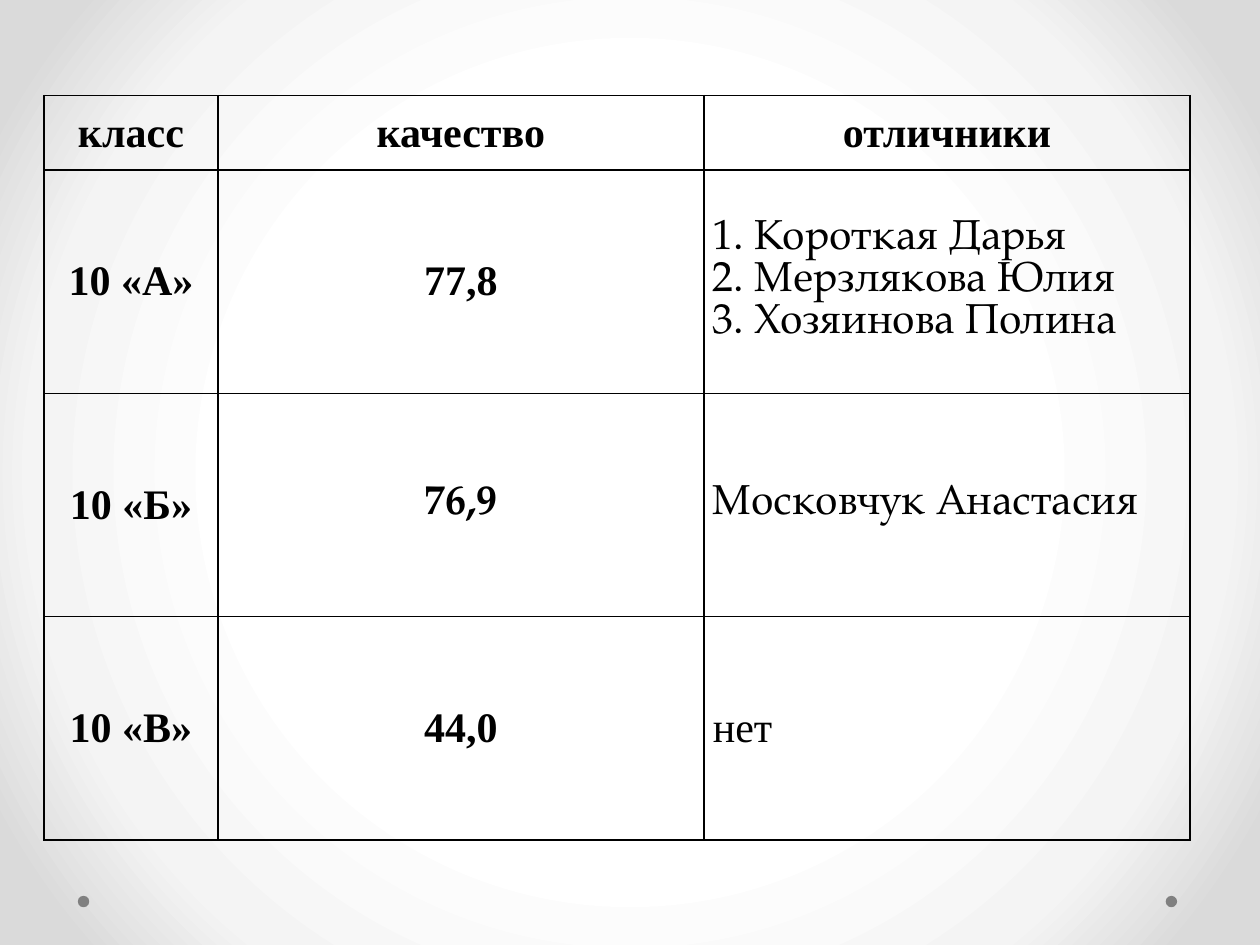
import pptx
import pptx.dml.color
import pptx.enum.shapes
import pptx.enum.text
import pptx.oxml
import pptx.oxml.ns
import pptx.util

Cm = pptx.util.Cm
Pt = pptx.util.Pt
ALIGN = pptx.enum.text.PP_ALIGN
NS = pptx.oxml.ns.nsdecls("a")

COLORS = {"text": "000000", "line": "000000", "dot": "808080"}
GLOW = {50: "FFFFFF", 76: "F4F4F4", 92: "DADADA"}
SERIF = "Times New Roman"
BOOK = "TeX Gyre Pagella"

COLS = [3.5, 9.8, 9.8]
ROWS = [1.5, 4.5, 4.5, 4.5]
HEAD = ["класс", "качество", "отличники"]
# Each row: texts, then the fonts of its cells
DATA = [
    (HEAD, [SERIF] * 3),
    (["10 «А»", "77,8", "1. Короткая Дарья\n2. Мерзлякова Юлия\n3. Хозяинова Полина"],
     [SERIF, SERIF, BOOK]),
    (["10 «Б»", "76,9", "Московчук Анастасия"], [SERIF, BOOK, BOOK]),
    (["10 «В»", "44,0", "нет"], [SERIF] * 3),
]


def rgb(name):
    return pptx.dml.color.RGBColor.from_string(COLORS[name])


def paint(slide):
    """Give the slide a round gradient that darkens towards the corners."""
    slide.background.fill.solid()
    back = slide.element.find(".//" + pptx.oxml.ns.qn("p:bgPr"))
    stops = "".join(
        f'<a:gs pos="{pos * 1000}"><a:srgbClr val="{tone}"/></a:gs>'
        for pos, tone in GLOW.items())
    back.replace(back[0], pptx.oxml.parse_xml(
        f'<a:gradFill {NS} rotWithShape="1"><a:gsLst>{stops}</a:gsLst>'
        '<a:path path="circle"><a:fillToRect l="50000" t="50000" r="50000" b="50000"/>'
        '</a:path></a:gradFill>'))


def dots(slide, left, top, width, size):
    """Place one dot at each end of the box."""
    for x in (left, left + width - size):
        dot = slide.shapes.add_shape(
            pptx.enum.shapes.MSO_SHAPE.OVAL, Cm(x), Cm(top), Cm(size), Cm(size))
        dot.shadow.inherit = False
        dot.fill.solid()
        dot.fill.fore_color.rgb = rgb("dot")
        dot.line.fill.background()


def frame(cell):
    """Draw the four borders of a cell, without fill."""
    cell.fill.background()
    props = cell._tc.get_or_add_tcPr()
    for i, side in enumerate(["lnL", "lnR", "lnT", "lnB"]):
        props.insert(i, pptx.oxml.parse_xml(
            f'<a:{side} {NS} w="{Pt(1)}"><a:solidFill>'
            f'<a:srgbClr val="{COLORS["line"]}"/></a:solidFill></a:{side}>'))


def write(cell, text, face, bold, align):
    cell.margin_left = cell.margin_right = Cm(0.18)
    cell.margin_top = cell.margin_bottom = 0
    cell.vertical_anchor = pptx.enum.text.MSO_ANCHOR.MIDDLE
    cell.text = text
    for para in cell.text_frame.paragraphs:
        para.alignment = align
        para.font.name = face
        para.font.size = Pt(24)
        para.font.bold = bold
        para.font.color.rgb = rgb("text")
        if "\n" in text:
            para.line_spacing = Pt(24)


def marks(slide, left, top):
    """Build the table of classes, marks and best pupils."""
    table = slide.shapes.add_table(
        len(ROWS), len(COLS), Cm(left), Cm(top), Cm(sum(COLS)), Cm(sum(ROWS))).table
    table.horz_banding = False
    for col, width in zip(table.columns, COLS):
        col.width = Cm(width)
    for r, (texts, faces) in enumerate(DATA):
        table.rows[r].height = Cm(ROWS[r])
        for c, (text, face) in enumerate(zip(texts, faces)):
            names = r > 0 and c == 2
            cell = table.cell(r, c)
            write(cell, text, face, not names, ALIGN.LEFT if names else ALIGN.CENTER)
            frame(cell)


def main():
    deck = pptx.Presentation()
    deck.slide_width, deck.slide_height = Cm(25.4), Cm(19.05)
    slide = deck.slides.add_slide(deck.slide_layouts[6])
    paint(slide)
    dots(slide, 1.57, 18.06, 22.16, 0.23)
    marks(slide, 0.89, 1.93)
    deck.save("out.pptx")


if __name__ == "__main__":
    main()
